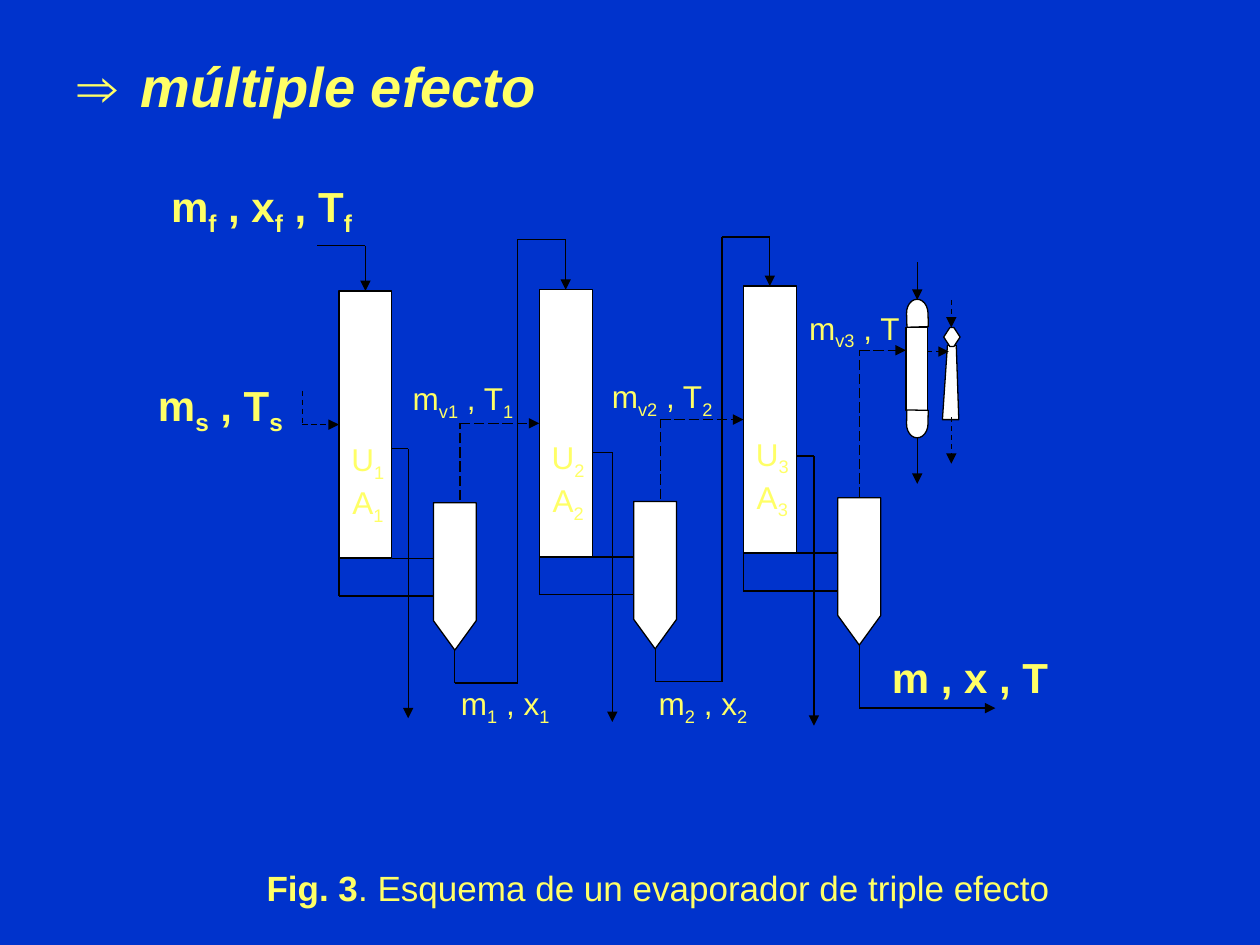
from dataclasses import dataclass

from lxml import etree
from pptx import Presentation
from pptx import util as u
from pptx.dml import color
from pptx.enum import dml, shapes, text
from pptx.oxml import ns

BLUE = color.RGBColor(0x00, 0x33, 0xCC)
YELLOW = color.RGBColor(0xFF, 0xFF, 0x66)
WHITE = color.RGBColor(0xFF, 0xFF, 0xFF)
BLACK = color.RGBColor(0x00, 0x00, 0x00)

KIND = shapes.MSO_SHAPE
DASH = dml.MSO_LINE.DASH
LONG_DASH = dml.MSO_LINE.LONG_DASH
LEFT = text.PP_ALIGN.LEFT
CENTER = text.PP_ALIGN.CENTER

LARGE = {"size": u.Pt(24), "bold": True}
SMALL = {"size": u.Pt(18), "bold": False}
TITLE = {"size": u.Pt(32), "bold": True}
TITLE_ITALIC = TITLE | {"italic": True}
CAPTION = {"size": u.Pt(20), "bold": False}
CAPTION_BOLD = CAPTION | {"bold": True}

Point = tuple[float, float]


@dataclass
class Part:
    kind: int
    left: float
    top: float
    width: float
    height: float
    rotation: float = 0


@dataclass
class Effect:
    left: float
    top: float
    inlet: float
    drain_x: float
    drain_y: float

    @property
    def axis(self) -> float:
        return self.left + 0.21

    @property
    def middle(self) -> float:
        return self.top + 1.06

    @property
    def right(self) -> float:
        return self.left + 0.42

    @property
    def separator(self) -> float:
        return self.left + 0.75


@dataclass
class Label:
    left: float
    top: float
    width: float
    height: float
    wording: str
    style: dict
    align: int = CENTER


@dataclass
class Heading:
    left: float
    top: float
    width: float
    height: float
    spans: list
    align: int


EFFECTS = [
    Effect(2.69, 2.31, 1.95, 3.24, 3.56),
    Effect(4.28, 2.30, 1.90, 4.86, 3.59),
    Effect(5.90, 2.27, 1.88, 6.46, 3.62),
]

CONDENSER = [
    Part(KIND.FLOWCHART_DELAY, 7.17, 2.4, 0.22, 0.17, 268.3),
    Part(KIND.RECTANGLE, 7.19, 2.6, 0.17, 0.66),
    Part(KIND.FLOWCHART_DELAY, 7.17, 3.28, 0.22, 0.17, 91.1),
]
EJECTOR_HEAD = Part(KIND.HEXAGON, 7.49, 2.6, 0.13, 0.15)
EJECTOR_BODY = [(7.61, 3.33), (7.59, 2.74), (7.52, 2.74), (7.48, 3.33)]

LABELS = [
    Label(1.26, 1.38, 1.97, 0.5, "m|f| , x|f| , T|f", LARGE, LEFT),
    Label(1.03, 2.96, 1.44, 0.5, "m|s| , T|s", LARGE),
    Label(3.15, 2.96, 1.05, 0.38, "m|v1| , T|1", SMALL),
    Label(4.73, 2.94, 1.05, 0.38, "m|v2| , T|2", SMALL),
    Label(6.24, 2.4, 1.08, 0.38, "m|v3| , T", SMALL),
    Label(3.56, 5.38, 1.13, 0.38, "m|1| , x|1", SMALL, LEFT),
    Label(5.13, 5.38, 1.13, 0.38, "m|2| , x|2", SMALL, LEFT),
    Label(6.98, 5.12, 1.83, 0.5, "m , x , T", LARGE, LEFT),
]

HEADINGS = [
    Heading(0.52, 0.36, 9, 0.63,
            [("⇒\t", TITLE), ("múltiple efecto", TITLE_ITALIC)], LEFT),
    Heading(0.35, 6.83, 9.25, 0.43,
            [("\t", CAPTION), ("Fig. 3", CAPTION_BOLD),
             (". Esquema de un evaporador de triple efecto", CAPTION)], CENTER),
]


def paint(shape) -> None:
    shape.shadow.inherit = False
    shape.fill.solid()
    shape.fill.fore_color.rgb = WHITE
    shape.line.color.rgb = BLACK
    shape.line.width = u.Pt(0.75)


def add_part(page, part: Part):
    bounds = (part.left, part.top, part.width, part.height)
    shape = page.shapes.add_shape(part.kind, *map(u.Inches, bounds))
    shape.rotation = part.rotation
    paint(shape)
    return shape


def add_pipe(page, points: list[Point], dash=None, arrow: bool = False):
    for start, end in zip(points, points[1:]):
        pipe = page.shapes.add_connector(
            shapes.MSO_CONNECTOR.STRAIGHT, *map(u.Inches, start + end))
        pipe.line.color.rgb = BLACK
        pipe.line.width = u.Pt(0.75)
        if dash:
            pipe.line.dash_style = dash
        properties = pipe._element.spPr
        etree.SubElement(properties, ns.qn("a:effectLst"))
    if arrow:
        etree.SubElement(properties.find(ns.qn("a:ln")), ns.qn("a:tailEnd"), type="triangle")
    return pipe


def add_text(page, bounds: Point, spans: list, align: int) -> None:
    box = page.shapes.add_textbox(*map(u.Inches, bounds))
    box.text_frame.word_wrap = True
    para = box.text_frame.paragraphs[0]
    para.alignment = align
    for wording, style in spans:
        span = para.add_run()
        span.text = wording
        span.font.color.rgb = YELLOW
        for name, value in ({"name": "Arial"} | style).items():
            if name == "baseline":
                span._r.get_or_add_rPr().set(name, value)
            else:
                setattr(span.font, name, value)


def add_label(page, label: Label) -> None:
    lowered = label.style | {"baseline": "-25000"}
    spans = [(wording, lowered if index % 2 else label.style)
             for index, wording in enumerate(label.wording.split("|"))]
    add_text(page, (label.left, label.top, label.width, label.height), spans, label.align)


def add_effect(page, effect: Effect):
    left, top = effect.left, effect.top
    column = add_part(page, Part(KIND.RECTANGLE, left, top, 0.42, 2.12))
    add_part(page, Part(KIND.FLOWCHART_OFFPAGE_CONNECTOR, effect.separator, top + 1.68, 0.34, 1.17))
    add_pipe(page, [(left, top + 2.12), (left, top + 2.42), (effect.separator, top + 2.42)])
    add_pipe(page, [(effect.right, top + 2.12), (effect.separator, top + 2.12)])
    add_pipe(page, [(effect.right, effect.drain_y), (effect.drain_x, effect.drain_y),
                    (effect.drain_x, effect.drain_y + 2.14)], arrow=True)
    return column


def add_feed(page, effect: Effect, column, source: list[Point]) -> None:
    points = source + [(effect.axis - 0.38, effect.inlet), (effect.axis, effect.inlet),
                       (effect.axis, effect.top)]
    add_pipe(page, points, arrow=True).end_connect(column, 0)


def main() -> None:
    deck = Presentation()
    deck.slide_width, deck.slide_height = u.Inches(10), u.Inches(7.5)
    page = deck.slides.add_slide(deck.slide_layouts[6])
    page.background.fill.solid()
    page.background.fill.fore_color.rgb = BLUE

    columns = [add_effect(page, effect) for effect in EFFECTS]
    first, last = EFFECTS[0], EFFECTS[-1]
    add_feed(page, first, columns[0], [])
    steam = [(2.4, 3.1), (2.4, first.middle), (first.left, first.middle)]
    add_pipe(page, steam, DASH, True).end_connect(columns[0], 1)

    for effect, following, column in zip(EFFECTS, EFFECTS[1:], columns[1:]):
        outlet, level = effect.separator + 0.17, effect.top + 3.11
        add_feed(page, following, column, [(outlet, effect.top + 2.85), (outlet, level),
                                           (following.axis - 0.38, level)])
        vapour_x = effect.separator + 0.21
        vapour = [(vapour_x, effect.top + 1.66), (vapour_x, following.middle),
                  (following.left, following.middle)]
        add_pipe(page, vapour, LONG_DASH, True).end_connect(column, 1)

    outlet = last.separator + 0.17
    add_pipe(page, [(outlet, 5.12), (outlet, 5.62), (7.9, 5.62)], arrow=True)
    add_pipe(page, [(outlet, 3.95), (outlet, 2.78), (7.19, 2.78)], LONG_DASH, True)

    for part in CONDENSER:
        add_part(page, part)
    corners = [tuple(map(u.Inches, corner)) for corner in EJECTOR_BODY]
    outline = page.shapes.build_freeform(*corners[0])
    outline.add_line_segments(corners[1:], close=True)
    paint(outline.convert_to_shape())
    add_part(page, EJECTOR_HEAD).adjustments[0] = 0.375
    for x, spans, dash in ((7.28, ((2.08, 2.38), (3.47, 3.84)), None),
                           (7.55, ((2.38, 2.6), (3.31, 3.68)), DASH)):
        for start, end in spans:
            add_pipe(page, [(x, start), (x, end)], dash, True)
    add_pipe(page, [(7.36, 2.79), (7.53, 2.79)], DASH, True)

    for label in LABELS:
        add_label(page, label)
    for number, effect in enumerate(EFFECTS, 1):
        add_label(page, Label(effect.left - 0.02, effect.top + 1.13, 0.5, 0.88,
                              f"U|{number}| A|{number}", SMALL))
    for heading in HEADINGS:
        add_text(page, (heading.left, heading.top, heading.width, heading.height),
                 heading.spans, heading.align)
    deck.save("out.pptx")


if __name__ == "__main__":
    main()
